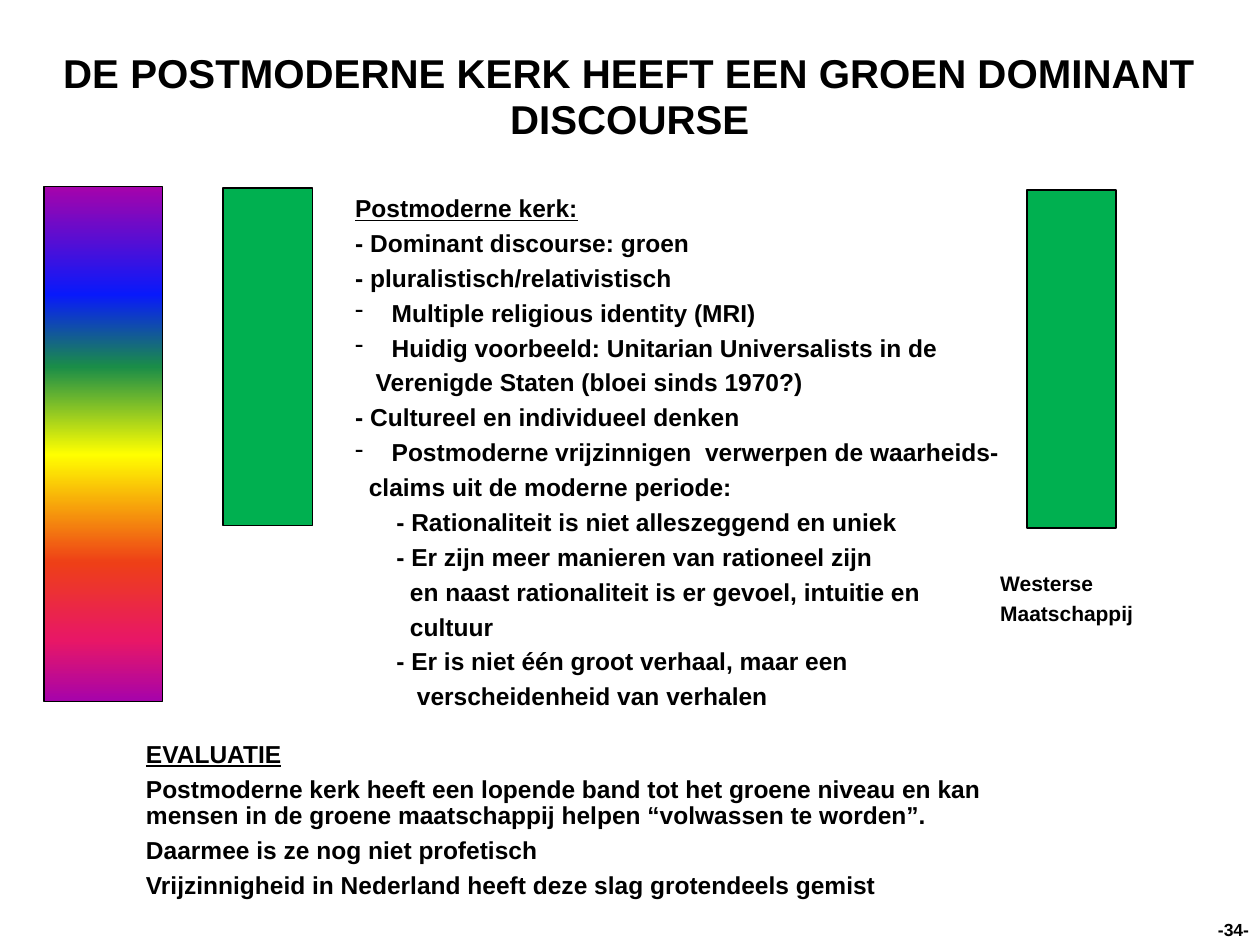
from pptx import Presentation
from pptx.dml.color import RGBColor
from pptx.enum.shapes import MSO_SHAPE
from pptx.enum.text import MSO_ANCHOR, MSO_AUTO_SIZE, PP_ALIGN
from pptx.util import Inches, Pt
from lxml.etree import SubElement
from pptx.oxml.ns import qn

# Content: (text, style) where style is "head", "dash" or an indent in spaces
TITLE = "DE POSTMODERNE KERK HEEFT EEN GROEN DOMINANT DISCOURSE"
CHURCH = [
    ("Postmoderne kerk:", "head"),
    ("- Dominant discourse: groen", 0),
    ("- pluralistisch/relativistisch", 0),
    ("Multiple religious identity (MRI)", "dash"),
    ("Huidig voorbeeld: Unitarian Universalists in de", "dash"),
    ("Verenigde Staten (bloei sinds 1970?)", 3),
    ("- Cultureel en individueel denken", 0),
    ("Postmoderne vrijzinnigen  verwerpen de waarheids-", "dash"),
    ("claims uit de moderne periode:", 2),
    ("- Rationaliteit is niet alleszeggend en uniek", 6),
    ("- Er zijn meer manieren van rationeel zijn", 6),
    ("en naast rationaliteit is er gevoel, intuitie en", 8),
    ("cultuur", 8),
    ("- Er is niet één groot verhaal, maar een", 6),
    ("verscheidenheid van verhalen", 9),
]
VERDICT = [
    ("EVALUATIE", "head"),
    ("Postmoderne kerk heeft een lopende band tot het groene niveau en kan "
     "mensen in de groene maatschappij helpen “volwassen te worden”.", 0),
    ("Daarmee is ze nog niet profetisch", 0),
    ("Vrijzinnigheid in Nederland heeft deze slag grotendeels gemist", 0),
]
WEST = [("Westerse", 0), ("Maatschappij", 0)]
PAGE = "-34-"

THEME = {
    "font": "Arial", "ink": "000000", "green": "00B050",
    "title": 23, "body": 14, "label": 12, "page": 10,
    "rainbow": [(0, "A603AB"), (21, "0819FB"), (35, "1A8D48"), (52, "FFFF00"),
                (73, "EE3F17"), (88, "E81766"), (100, "A603AB")],
}
WIDE, HIGH = 10, 7.5
SPACE = 0.28    # width of a space, in ems
HANG = 0.29     # hanging indent of a dash, in inches
BEFORE = 0.345  # gap above a line, in ems
BAR = (0.71, 2.68)


def rgb(code):
    return RGBColor.from_string(code)


def write(slide, box, lines, size, lead=0.9, gap=BEFORE, wrap=True,
          align=PP_ALIGN.LEFT, grow=True):
    frame = slide.shapes.add_textbox(*map(Inches, box)).text_frame
    frame.word_wrap = wrap
    frame.auto_size = MSO_AUTO_SIZE.SHAPE_TO_FIT_TEXT if grow else MSO_AUTO_SIZE.NONE
    for i, (text, style) in enumerate(lines):
        para = frame.add_paragraph() if i else frame.paragraphs[0]
        para.text = text
        para.alignment = align
        para.line_spacing = lead
        para.space_before = Pt(round(gap * size, 1))
        font = para.font
        font.name, font.size, font.bold = THEME["font"], Pt(size), True
        font.color.rgb = rgb(THEME["ink"])
        font.underline = style == "head"
        indent(para, style, size)
    return frame


def indent(para, style, size):
    props = para._p.get_or_add_pPr()
    if style == "dash":
        props.set("marL", str(Inches(HANG)))
        props.set("indent", str(-Inches(HANG)))
        mark = SubElement(props, qn("a:buChar"))
        mark.set("char", "-")
        # Bullets come before the default run style
        props.find(qn("a:defRPr")).addprevious(mark)
    elif style != "head":
        props.set("marL", str(Pt(style * SPACE * size)))


def bar(slide, left, top, size, width):
    shape = slide.shapes.add_shape(
        MSO_SHAPE.RECTANGLE, *map(Inches, (left, top, *size)))
    shape.shadow.inherit = False
    shape.line.color.rgb = rgb(THEME["ink"])
    shape.line.width = Pt(width)
    shape.fill.solid()
    shape.fill.fore_color.rgb = rgb(THEME["green"])
    return shape


def blend(shape, stops):
    shape.fill.gradient()
    shape.fill.gradient_angle = 270
    row = shape.fill._fill._gradFill.find(qn("a:gsLst"))
    row.clear()
    for share, code in stops:
        stop = SubElement(row, qn("a:gs"), pos=str(share * 1000))
        SubElement(stop, qn("a:srgbClr"), val=code)


def main():
    deck = Presentation()
    deck.slide_width, deck.slide_height = Inches(WIDE), Inches(HIGH)
    slide = deck.slides.add_slide(deck.slide_layouts[6])

    # Page number
    frame = write(slide, (9.61, 7.29, 0.36, 0.17), [(PAGE, 0)], THEME["page"],
                  lead=1.0, gap=0, wrap=False, align=PP_ALIGN.CENTER)
    frame.margin_left = frame.margin_right = 0
    frame.margin_top = frame.margin_bottom = 0
    frame.vertical_anchor = MSO_ANCHOR.BOTTOM

    # Title
    frame = write(slide, (0, 0.33, WIDE, 1.2), [(TITLE, 0)], THEME["title"],
                  lead=0.95, gap=0, align=PP_ALIGN.CENTER, grow=False)
    frame.margin_top = Inches(0.08)

    # Rainbow and the two green bars
    blend(bar(slide, 0.35, 1.48, (0.94, 4.09), 0.75), THEME["rainbow"])
    for left, top in ((1.77, 1.49), (8.15, 1.51)):
        bar(slide, left, top, BAR, 1)

    # Texts
    write(slide, (7.84, 4.5, 1.27, 0.53), WEST, THEME["label"], wrap=False)
    write(slide, (2.72, 1.51, 4.72, 2.01), CHURCH, THEME["body"],
          wrap=False, grow=False)
    write(slide, (1.06, 5.84, 7.32, 1.66), VERDICT, THEME["body"], grow=False)

    deck.save("out.pptx")


if __name__ == "__main__":
    main()
